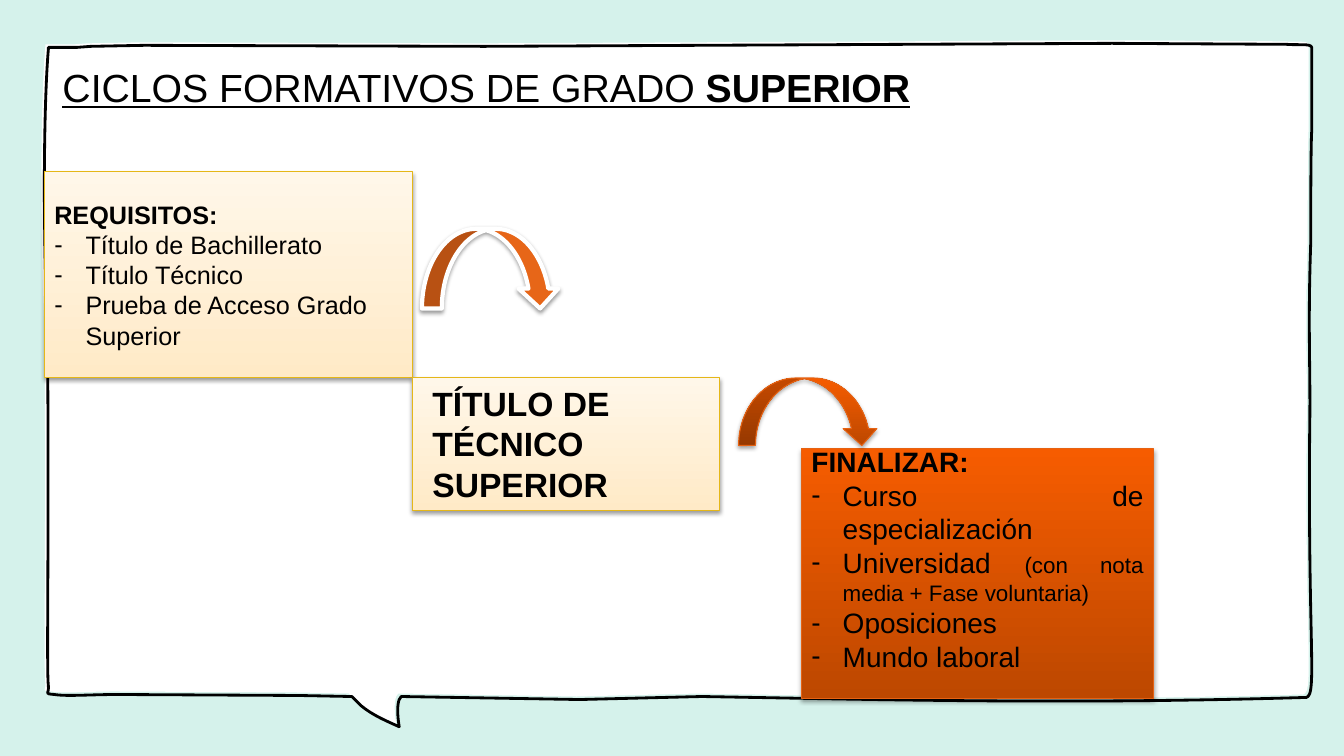
from lxml import etree
from pptx import Presentation
from pptx.dml.color import RGBColor
from pptx.enum.shapes import MSO_SHAPE
from pptx.enum.text import MSO_ANCHOR, PP_ALIGN
from pptx.oxml.ns import qn
from pptx.util import Inches, Pt

RECT, ARROW = MSO_SHAPE.RECTANGLE, MSO_SHAPE.CURVED_DOWN_ARROW
LEFT, JUSTIFY = PP_ALIGN.LEFT, PP_ALIGN.JUSTIFY
TOP, MIDDLE = MSO_ANCHOR.TOP, MSO_ANCHOR.MIDDLE
CREAM, ORANGE = ("FFEAC7", "FFF7E9"), ("BD4800", "F65C00")
BOLD, UNDERLINE = {"bold": True}, {"underline": True}

prs = Presentation()
prs.slide_width, prs.slide_height = Inches(13.33), Inches(7.5)
UNIT = prs.slide_height / 75
s = prs.slides.add_slide(prs.slide_layouts[6])


def color(hex_text):
    return RGBColor.from_string(hex_text)


def write(tf, paragraphs, size, anchor=MIDDLE, align=LEFT):
    tf.word_wrap = True
    tf.vertical_anchor = anchor
    for i, (bullet, runs) in enumerate(paragraphs):
        p = tf.paragraphs[0] if i == 0 else tf.add_paragraph()
        p.alignment = align
        if bullet:
            pPr = p._p.get_or_add_pPr()
            pPr.set("marL", str(Inches(0.31)))
            pPr.set("indent", str(-Inches(0.31)))
            buClr = etree.SubElement(pPr, qn("a:buClr"))
            etree.SubElement(buClr, qn("a:srgbClr"), val="000000")
            etree.SubElement(pPr, qn("a:buFont"), typeface="Arial")
            etree.SubElement(pPr, qn("a:buChar"), char="-")
        for text, extra in runs:
            r = p.add_run()
            r.text = text
            r.font.color.rgb = color("000000")
            for key, value in {"name": "Arial", "size": Pt(size), "bold": False, **extra}.items():
                setattr(r.font, key, value)


s.background.fill.solid()
s.background.fill.fore_color.rgb = color("D5F2EB")

outline = [
    (110.3, 4.3), (127.6, 4.4), (128.9, 4.5, 130, 4.3, 130.1, 4.7), (130.1, 7.7),
    (130.1, 9.4, 130.1, 11.3, 130.1, 13), (130, 14.2, 130, 23.5, 130, 24.2),
    (129.7, 33, 130, 36.5, 129.9, 42.5), (129.7, 65.6, 130.8, 69.5, 129.3, 69.2),
    (105.6, 69.9, 87.2, 69.4, 69.6, 69.1), (57.5, 69.4), (39.8, 69.1), (39.6, 69.4),
    (39.4, 69.9, 39.4, 70.9, 39.6, 72.1), (38.5, 71.6, 37, 71, 35.8, 70),
    (34.9, 69.1), (29.6, 69), (11.7, 68.9), (9, 68.9, 6.6, 69.1, 5.4, 68.9),
    (4.3, 68.8, 4.9, 68.9, 4.8, 68), (4.6, 66.5, 4.9, 52.2, 4.7, 32.5),
    (4.2, 20.7, 4.4, 9.6, 4.8, 4.9), (4.8, 4.8, 4.8, 4.8, 4.8, 4.7), (5.4, 4.7),
    (7.7, 4.7), (9, 4.6), (14.3, 4.5), (48, 4.6), (110.3, 4.3),
]
for offset, filled in ((-0.3, True), (0, False)):
    parts = [[round((v + offset) * UNIT) for v in part] for part in outline]
    builder = s.shapes.build_freeform(*parts[0])
    builder.add_line_segments([part[-2:] for part in parts[1:]], close=True)
    sp = builder.convert_to_shape()
    sp.shadow.inherit = False
    for segment, part in zip(list(sp._element.iter(qn("a:lnTo"))), parts[1:]):
        if len(part) == 6:
            segment.tag = qn("a:cubicBezTo")
            segment.clear()
            for x, y in zip(part[::2], part[1::2]):
                etree.SubElement(segment, qn("a:pt"), x=str(x - sp.left), y=str(y - sp.top))
    if filled:
        sp.fill.solid()
        sp.fill.fore_color.rgb = color("FFFFFF")
        sp.line.fill.background()
    else:
        sp.fill.background()
        sp.line.color.rgb = color("000000")
        sp.line.width = Pt(2)

tf = s.shapes.add_textbox(*(round(v * UNIT) for v in (6.2, 1.7, 94, 14.4))).text_frame
tf.margin_left = tf.margin_top = tf.margin_right = tf.margin_bottom = 0
write(tf, [(False, [("CICLOS FORMATIVOS DE GRADO ", UNDERLINE),
                    ("SUPERIOR", {**UNDERLINE, **BOLD})])], 28)
tf.paragraphs[0].line_spacing = 0.9

shapes = []
for kind, area, fill, line, width, alpha, drop in (
    (RECT, (4.4, 17.05, 36.55, 20.4), CREAM, "E5B718", 0.75, 38, 1.6),
    (RECT, (40.9, 37.5, 30.45, 13.15), CREAM, "E5B718", 0.75, 38, 1.6),
    (RECT, (79.5, 44.5, 34.9, 24.75), ORANGE, "E66212", 0.75, 35, 1.8),
    (ARROW, (41.85, 22.7, 13.7, 7.9), ("E76618",), "FFFFFF", 3, 38, 1.6),
    (ARROW, (73.25, 37.5, 13.9, 6.7), ORANGE, "E66212", 0.75, 35, 1.8),
):
    sp = s.shapes.add_shape(kind, *(round(v * UNIT) for v in area))
    sp.shadow.inherit = False
    effects = sp._element.spPr.find(qn("a:effectLst"))
    shadow = etree.SubElement(effects, qn("a:outerShdw"), blurRad=str(Pt(3.1)),
                              dist=str(Pt(drop)), dir="5400000", rotWithShape="0")
    tint = etree.SubElement(shadow, qn("a:srgbClr"), val="000000")
    etree.SubElement(tint, qn("a:alpha"), val=str(alpha * 1000))
    if len(fill) == 1:
        sp.fill.solid()
        sp.fill.fore_color.rgb = color(fill[0])
    else:
        sp.fill.gradient()
        sp.fill.gradient_angle = 90
        for position, (stop, value) in enumerate(zip(sp.fill.gradient_stops, fill)):
            stop.position = position
            stop.color.rgb = color(value)
    sp.line.color.rgb = color(line)
    sp.line.width = Pt(width)
    shapes.append(sp)

write(shapes[0].text_frame, [
    (False, [("REQUISITOS:", BOLD)]),
    (True, [("Título de Bachillerato", {})]),
    (True, [("Título Técnico", {})]),
    (True, [("Prueba de Acceso Grado Superior", {})]),
], 18)

tf = s.shapes.add_textbox(*(round(v * UNIT) for v in (41.9, 37.5, 30.4, 13))).text_frame
write(tf, [(False, [("TÍTULO DE TÉCNICO SUPERIOR", BOLD)])], 24, TOP)

tf = shapes[2].text_frame
tf.margin_bottom = Inches(0.34)
write(tf, [
    (False, [("FINALIZAR:", BOLD)]),
    (True, [("Curso de especialización", {})]),
    (True, [("Universidad ", {}), ("(con nota media + Fase voluntaria)", {"size": Pt(16)})]),
    (True, [("Oposiciones", {})]),
    (True, [("Mundo laboral", {})]),
], 20, align=JUSTIFY)

prs.save("out.pptx")
